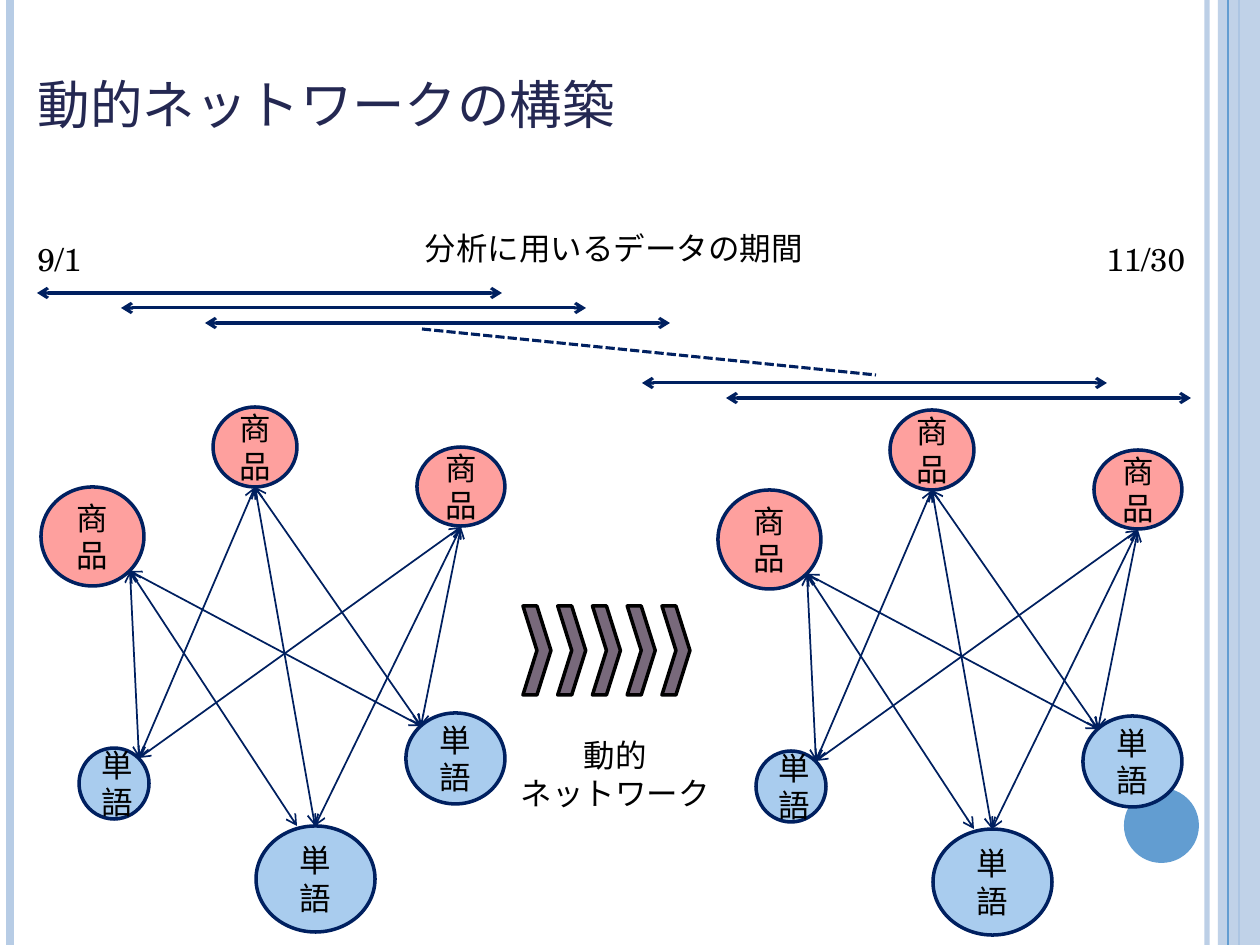
from lxml import etree
from pptx import Presentation
from pptx import util as u
from pptx.dml.color import RGBColor
from pptx.enum import dml, shapes, text
from pptx.oxml import ns

PX = 914400 / 126
FONT = "TeX Gyre Schola"
NAVY, PALE, BLUE = "002060", "B7CCE5", "629DD1"
PRODUCT, WORD = ("商品", "FEA09E"), ("単語", "A9CCEE")

TITLE = ("動的ネットワークの構築", (25, 65, 1121, 78))
LABELS = [  # paragraphs, box, centred
    (["分析に用いるデータの期間"], (338, 223, 552, 50), True),
    (["動的", "ネットワーク"], (505, 730, 220, 89), True),
    (["9/1"], (25, 234, 90, 50), False),
    (["11/30"], (1094, 234, 112, 50), False),
]

BORDER_LINES = [  # x, colour, points, opacity in percent
    (1207, PALE, 3, 93),
    (10, PALE, 4.5, 100),
    (1239, BLUE, 1.5, 100),
]
INNER_LINE = (1228, BLUE, 0.75, 100)

NODES = [
    (WORD, (406, 713, 99, 91)),
    (PRODUCT, (417, 447, 88, 79)),
    (PRODUCT, (213, 407, 84, 80)),
    (WORD, (256, 826, 119, 106)),
    (WORD, (79, 748, 70, 71)),
    (PRODUCT, (41, 487, 103, 99)),
]
JOINTS = {
    "left product": (130, 571),
    "top product": (255, 487),
    "right product": (461, 527),
    "left word": (139, 758),
    "bottom word": (315, 826),
    "bottom word side": (297, 826),
    "right word": (421, 726),
}
EDGES = [
    ("top product", "bottom word"),
    ("top product", "right word"),
    ("left word", "left product"),
    ("left product", "bottom word side"),
    ("left word", "right product"),
    ("bottom word", "right product"),
    ("left product", "right word"),
    ("right product", "right word"),
    ("top product", "left word"),
]
NETWORK_OFFSETS = [(0, 0), (677, 3)]

PERIOD_LENGTH = 465
PERIODS = [(37, 0), (121, 1), (205, 2), (726, 7), (642, 6)]  # x, row
FIRST_ROW, ROW_STEP = 293, 15
CHEVRONS, CHEVRON_WIDTH = 5, 28
CHEVRON_LEFT, CHEVRON_LAST = 523, 662


def px(*values):
    return [round(value * PX) for value in values]


def rgb(color):
    return RGBColor.from_string(color)


def set_opacity(fill, percent):
    color = fill._xPr.find(".//" + ns.qn("a:srgbClr"))
    etree.SubElement(color, ns.qn("a:alpha"), val=str(percent * 1000))


def add_line(slide, start, end, color, width, arrows=False):
    line = slide.shapes.add_connector(
        shapes.MSO_CONNECTOR.STRAIGHT, *px(*start, *end))
    line.line.color.rgb = rgb(color)
    line.line.width = u.Pt(width)
    properties = line._element.spPr
    etree.SubElement(properties, ns.qn("a:effectLst"))
    if arrows:
        outline = properties.find(ns.qn("a:ln"))
        for end_name in ("a:headEnd", "a:tailEnd"):
            etree.SubElement(outline, ns.qn(end_name), type="arrow")
    return line


def add_figure(slide, kind, box, fill, outline=None):
    shape = slide.shapes.add_shape(kind, *px(*box))
    shape.shadow.inherit = False
    shape.fill.solid()
    shape.fill.fore_color.rgb = rgb(fill)
    if outline:
        shape.line.color.rgb = rgb(outline)
        shape.line.width = u.Pt(2)
    else:
        shape.line.fill.background()
    return shape


def write(shape, lines, size=18, color="000000", centred=True):
    frame = shape.text_frame
    frame.word_wrap = True
    for index, line in enumerate(lines):
        paragraph = frame.add_paragraph() if index else frame.paragraphs[0]
        paragraph.alignment = (
            text.PP_ALIGN.CENTER if centred else text.PP_ALIGN.LEFT)
        run = paragraph.add_run()
        run.text = line
        run.font.name = FONT
        run.font.size = u.Pt(size)
        run.font.color.rgb = rgb(color)


def add_border_line(slide, x, color, width, opacity):
    line = add_line(slide, (x, 0), (x, 945), color, width)
    if opacity < 100:
        set_opacity(line.line.fill, opacity)


def add_border(slide):
    for border_line in BORDER_LINES:
        add_border_line(slide, *border_line)
    band = add_figure(
        slide, shapes.MSO_SHAPE.RECTANGLE, (1218, 0, 42, 945), PALE)
    set_opacity(band.fill, 87)
    add_border_line(slide, *INNER_LINE)
    add_figure(slide, shapes.MSO_SHAPE.OVAL, (1124, 788, 75, 75), BLUE)


def add_title(slide):
    wording, box = TITLE
    title = slide.shapes.title
    title.left, title.top, title.width, title.height = px(*box)
    title.text_frame.vertical_anchor = text.MSO_ANCHOR.MIDDLE
    write(title, [wording], 30, "242852", centred=False)


def add_network(slide, dx, dy):
    for (name, fill), (x, y, width, height) in NODES:
        node = add_figure(slide, shapes.MSO_SHAPE.OVAL,
                          (x + dx, y + dy, width, height), fill, NAVY)
        node.text_frame.vertical_anchor = text.MSO_ANCHOR.MIDDLE
        write(node, [name])
    for edge in EDGES:
        start, end = [(JOINTS[name][0] + dx, JOINTS[name][1] + dy)
                      for name in edge]
        add_line(slide, start, end, NAVY, 1, arrows=True)


def add_chevrons(slide):
    step = (CHEVRON_LAST - CHEVRON_LEFT) / (CHEVRONS - 1)
    for index in range(CHEVRONS):
        box = (CHEVRON_LEFT + index * step, 606, CHEVRON_WIDTH, 89)
        add_figure(slide, shapes.MSO_SHAPE.CHEVRON, box, "78697B", "000000")


def add_periods(slide):
    for x, row in PERIODS:
        y = FIRST_ROW + row * ROW_STEP
        add_line(slide, (x, y), (x + PERIOD_LENGTH, y), NAVY, 1.75, arrows=True)
    omitted = add_line(slide, (422, 329), (876, 375), NAVY, 1.75)
    omitted.line.dash_style = dml.MSO_LINE.SQUARE_DOT


def add_labels(slide):
    for lines, box, centred in LABELS:
        label = slide.shapes.add_textbox(*px(*box))
        write(label, lines, centred=centred)
        label.text_frame.auto_size = text.MSO_AUTO_SIZE.SHAPE_TO_FIT_TEXT


def main():
    presentation = Presentation()
    presentation.slide_width, presentation.slide_height = px(1260, 945)
    slide = presentation.slides.add_slide(presentation.slide_layouts[5])
    add_border(slide)
    add_title(slide)
    for offset in NETWORK_OFFSETS:
        add_network(slide, *offset)
    add_chevrons(slide)
    add_periods(slide)
    add_labels(slide)
    presentation.save("out.pptx")


if __name__ == "__main__":
    main()
